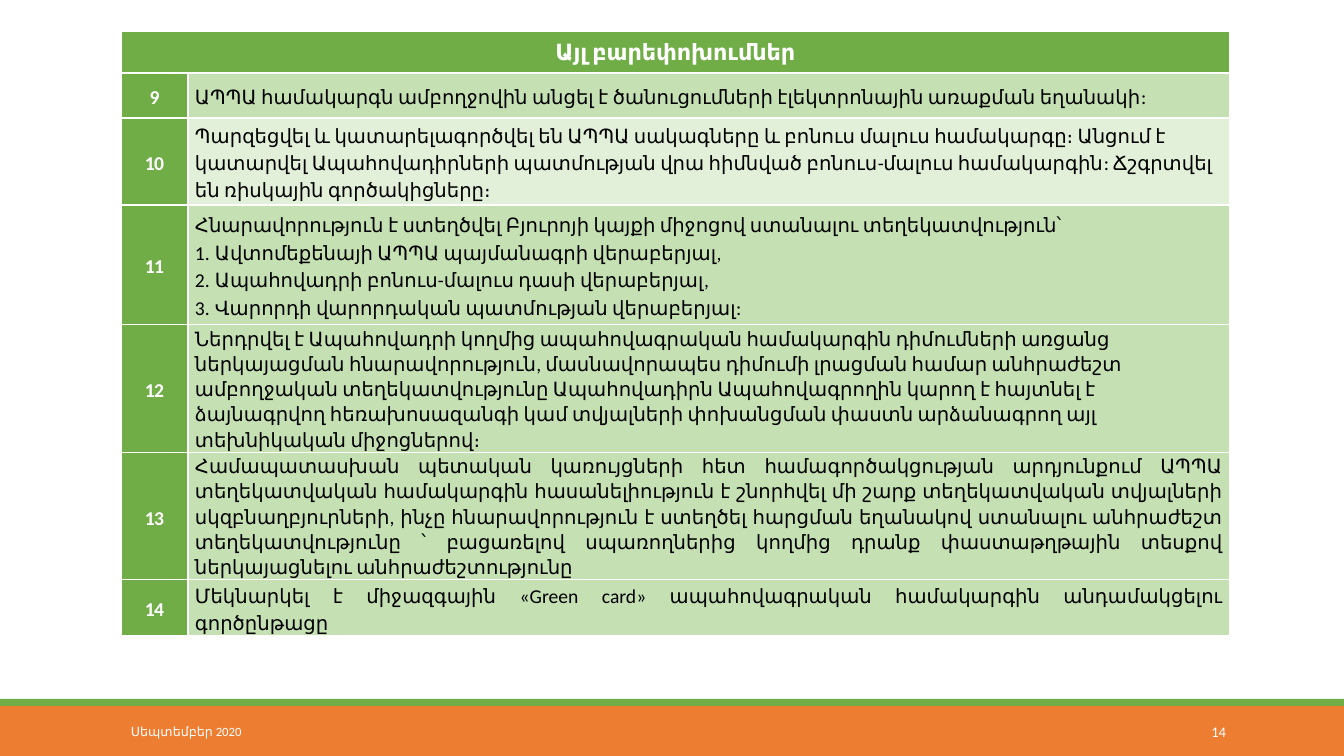
from lxml import etree
from pptx import Presentation
from pptx.dml.color import RGBColor
from pptx.enum.shapes import MSO_SHAPE
from pptx.enum.text import MSO_ANCHOR, PP_ALIGN
from pptx.oxml.ns import qn
from pptx.util import Emu, Pt

LEFT, CENTER, RIGHT, JUSTIFY = PP_ALIGN.LEFT, PP_ALIGN.CENTER, PP_ALIGN.RIGHT, PP_ALIGN.JUSTIFY
MIDDLE = MSO_ANCHOR.MIDDLE
RECTANGLE = MSO_SHAPE.RECTANGLE

GREEN, ORANGE, WHITE, BLACK = "70AD47", "ED7D31", "FFFFFF", "000000"
MINT, PALE = "C5E0B3", "E2EFD9"
FONT = "Calibri"
HEADING = "Այլ բարեփոխումներ"

REFORMS = [
    {"number": "9", "height": 45, "fill": MINT, "align": JUSTIFY, "spacing": 1.15, "items": [],
     "text": "ԱՊՊԱ համակարգն ամբողջովին անցել է ծանուցումների էլեկտրոնային առաքման եղանակի:"},
    {"number": "10", "height": 87, "fill": PALE, "align": LEFT, "spacing": 1.15, "items": [],
     "text": "Պարզեցվել և կատարելագործվել են ԱՊՊԱ սակագները և բոնուս մալուս համակարգը։ Անցում է "
             "կատարվել Ապահովադիրների պատմության վրա հիմնված բոնուս-մալուս համակարգին: Ճշգրտվել "
             "են ռիսկային գործակիցները։"},
    {"number": "11", "height": 120, "fill": MINT, "align": LEFT, "spacing": 1.15,
     "text": "Հնարավորություն է ստեղծվել Բյուրոյի կայքի միջոցով ստանալու տեղեկատվություն՝",
     "items": ["Ավտոմեքենայի ԱՊՊԱ պայմանագրի վերաբերյալ,",
               "Ապահովադրի բոնուս-մալուս դասի վերաբերյալ,",
               "Վարորդի վարորդական պատմության վերաբերյալ:"]},
    {"number": "12", "height": 118, "fill": MINT, "align": LEFT, "spacing": 1.06, "items": [],
     "text": "Ներդրվել է Ապահովադրի կողմից ապահովագրական համակարգին դիմումների առցանց "
             "ներկայացման հնարավորություն, մասնավորապես դիմումի լրացման համար անհրաժեշտ "
             "ամբողջական տեղեկատվությունը Ապահովադիրն Ապահովագրողին կարող է հայտնել է "
             "ձայնագրվող հեռախոսազանգի կամ տվյալների փոխանցման փաստն արձանագրող այլ "
             "տեխնիկական միջոցներով։"},
    {"number": "13", "height": 113, "fill": MINT, "align": JUSTIFY, "spacing": 1.06, "items": [],
     "text": "Համապատասխան պետական կառույցների հետ համագործակցության արդյունքում ԱՊՊԱ "
             "տեղեկատվական համակարգին հասանելիություն է շնորհվել մի շարք տեղեկատվական տվյալների "
             "սկզբնաղբյուրների, ինչը հնարավորություն է ստեղծել հարցման եղանակով ստանալու անհրաժեշտ "
             "տեղեկատվությունը ՝ բացառելով սպառողներից կողմից դրանք փաստաթղթային տեսքով "
             "ներկայացնելու անհրաժեշտությունը"},
    {"number": "14", "height": 41, "fill": MINT, "align": JUSTIFY, "spacing": 1.15, "items": [],
     "text": "Մեկնարկել է միջազգային «Green card» ապահովագրական համակարգին անդամակցելու գործընթացը"},
]
HEADING_HEIGHT = 42
COLUMNS = [67, 1042]
TABLE_LEFT, TABLE_TOP = 121, 31
PAGE_WIDTH, PAGE_HEIGHT = 1344, 756

BARS = [(706, 50, ORANGE), (699, 7, GREEN)]
FOOTERS = [
    ("Սեպտեմբեր 2020", 121, 272, 9, LEFT),
    ("14", 1092, 144, 10.5, RIGHT),
]


def px(length):
    return Emu(round(length * 914400 / 100.8))


def color(value):
    return RGBColor.from_string(value)


def write(para, text, size=14, ink=BLACK, bold=False, align=LEFT, spacing=1.0,
          tracking=0, numbered=False):
    if numbered:
        properties = para._p.get_or_add_pPr()
        properties.set("marL", str(px(20)))
        properties.set("indent", str(-px(20)))
        etree.SubElement(properties, qn("a:buAutoNum"), type="arabicPeriod")
    para.alignment = align
    para.line_spacing = spacing
    span = para.add_run()
    span.text = text
    span.font.name = FONT
    span.font.size = Pt(size)
    span.font.bold = bold
    span.font.color.rgb = color(ink)
    if tracking:
        span._r.get_or_add_rPr().set("spc", str(tracking))


def style_cell(cell, fill, side=7):
    properties = cell._tc.get_or_add_tcPr()
    for edge in ("lnL", "lnR", "lnT", "lnB"):
        line = etree.SubElement(properties, qn("a:" + edge), w=str(Pt(1)))
        paint = etree.SubElement(line, qn("a:solidFill"))
        etree.SubElement(paint, qn("a:srgbClr"), val=WHITE)
    cell.fill.solid()
    cell.fill.fore_color.rgb = color(fill)
    cell.vertical_anchor = MIDDLE
    cell.margin_left = cell.margin_right = px(side)
    cell.margin_top, cell.margin_bottom = px(1), 0


def add_bars(page):
    for top, height, fill in BARS:
        bar = page.shapes.add_shape(RECTANGLE, 0, px(top), px(PAGE_WIDTH), px(height))
        bar.shadow.inherit = False
        bar.fill.solid()
        bar.fill.fore_color.rgb = color(fill)
        bar.line.fill.background()


def add_reforms(page):
    heights = [HEADING_HEIGHT] + [reform["height"] for reform in REFORMS]
    table = page.shapes.add_table(len(heights), len(COLUMNS), px(TABLE_LEFT), px(TABLE_TOP),
                                  px(sum(COLUMNS)), px(sum(heights))).table
    table.first_row = table.horz_banding = False
    for column, width in zip(table.columns, COLUMNS):
        column.width = px(width)
    for row, height in zip(table.rows, heights):
        row.height = px(height)

    heading = table.cell(0, 0)
    heading.merge(table.cell(0, 1))
    for cell in table.rows[0].cells:
        style_cell(cell, GREEN, side=5)
    write(heading.text_frame.paragraphs[0], HEADING, size=16, ink=WHITE, bold=True,
          align=CENTER, spacing=1.06)

    for index, reform in enumerate(REFORMS, 1):
        number, body = table.cell(index, 0), table.cell(index, 1)
        style_cell(number, GREEN)
        style_cell(body, reform["fill"])
        write(number.text_frame.paragraphs[0], reform["number"], ink=WHITE, bold=True,
              align=CENTER, spacing=1.15, tracking=-50)
        write(body.text_frame.paragraphs[0], reform["text"], align=reform["align"],
              spacing=reform["spacing"])
        for item in reform["items"]:
            write(body.text_frame.add_paragraph(), item, spacing=reform["spacing"], numbered=True)


def add_footers(page):
    for text, left, width, size, align in FOOTERS:
        box = page.shapes.add_textbox(px(left), px(712), px(width), px(40))
        box.text_frame.word_wrap = True
        box.text_frame.vertical_anchor = MIDDLE
        write(box.text_frame.paragraphs[0], text, size=size, ink=WHITE, align=align)


def main():
    deck = Presentation()
    deck.slide_width, deck.slide_height = px(PAGE_WIDTH), px(PAGE_HEIGHT)
    page = deck.slides.add_slide(deck.slide_layouts[6])
    add_bars(page)
    add_reforms(page)
    add_footers(page)
    deck.save("out.pptx")


if __name__ == "__main__":
    main()
